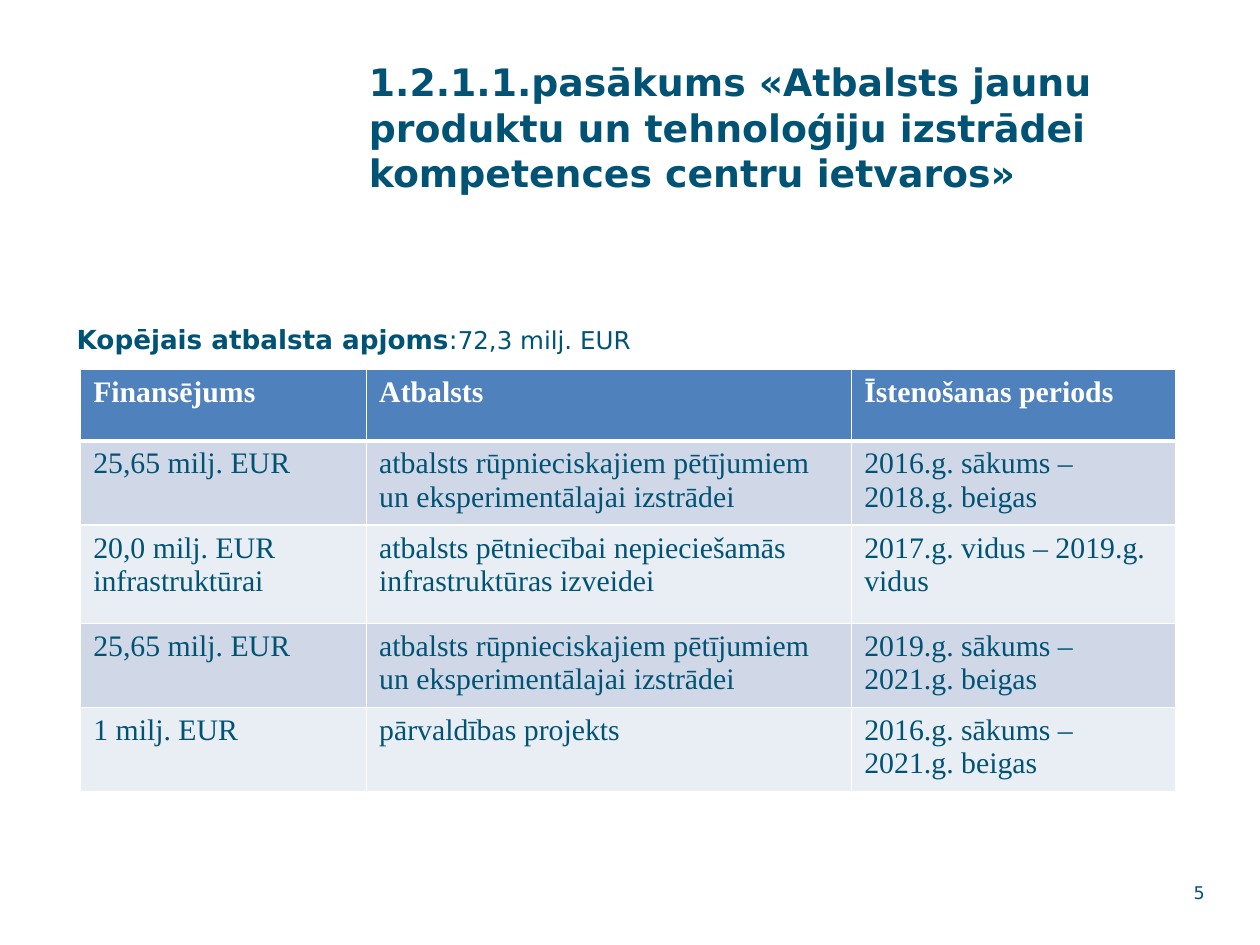
import pptx
import pptx.dml.color
import pptx.enum.text
import pptx.oxml
import pptx.oxml.ns
import pptx.util

Inches = pptx.util.Inches
Align = pptx.enum.text.PP_ALIGN
Anchor = pptx.enum.text.MSO_ANCHOR

COLUMN_WIDTHS = [2.27, 3.85, 2.57]
ROW_HEIGHTS = [0.57, 0.63, 0.78, 0.63, 0.63]
RESEARCH = "atbalsts rūpnieciskajiem pētījumiem un eksperimentālajai izstrādei"
FUNDING_ROWS = [
    ["Finansējums", "Atbalsts", "Īstenošanas periods"],
    ["25,65 milj. EUR", RESEARCH, "2016.g. sākums – 2018.g. beigas"],
    ["20,0 milj. EUR infrastruktūrai",
     "atbalsts pētniecībai nepieciešamās infrastruktūras izveidei",
     "2017.g. vidus – 2019.g. vidus"],
    ["25,65 milj. EUR", RESEARCH, "2019.g. sākums – 2021.g. beigas"],
    ["1 milj. EUR", "pārvaldības projekts", "2016.g. sākums – 2021.g. beigas"],
]


def color(value):
    return pptx.dml.color.RGBColor.from_string(value)


def write(paragraph, text, size=15, font="DejaVu Sans", fill="005374", bold=False):
    run = paragraph.add_run()
    run.text = text
    run.font.size = pptx.util.Pt(size)
    run.font.name = font
    run.font.bold = bold
    run.font.color.rgb = color(fill)


class SlideBuilder:
    header_fill = "4F81BD"
    band_fills = ["E9EDF4", "D0D8E8"]
    border = "FFFFFF"
    table_font = "Times New Roman"

    def __init__(self, presentation):
        self.slide = presentation.slides.add_slide(presentation.slide_layouts[6])

    def text_box(self, left, top, width, height, align=Align.LEFT, anchor=Anchor.TOP):
        shape = self.slide.shapes.add_textbox(
            Inches(left), Inches(top), Inches(width), Inches(height))
        frame = shape.text_frame
        frame.word_wrap = True
        frame.vertical_anchor = anchor
        paragraph = frame.paragraphs[0]
        paragraph.alignment = align
        return paragraph

    def cell_borders(self, cell, bottom_width):
        properties = cell._tc.get_or_add_tcPr()
        namespace = pptx.oxml.ns.nsdecls("a")
        for side in "LRTB":
            width = pptx.util.Pt(bottom_width if side == "B" else 1)
            properties.append(pptx.oxml.parse_xml(
                f'<a:ln{side} {namespace} w="{width}"><a:solidFill>'
                f'<a:srgbClr val="{self.border}"/></a:solidFill></a:ln{side}>'))

    def table(self, left, top, rows, widths, heights):
        table = self.slide.shapes.add_table(
            len(rows), len(widths), Inches(left), Inches(top),
            Inches(sum(widths)), Inches(sum(heights))).table
        for column, width in zip(table.columns, widths):
            column.width = Inches(width)
        for index, (row, height, texts) in enumerate(zip(table.rows, heights, rows)):
            row.height = Inches(height)
            header = index == 0
            for cell, text in zip(row.cells, texts):
                self.cell_borders(cell, 3 if header or index == len(rows) else 1)
                cell.fill.solid()
                cell.fill.fore_color.rgb = color(
                    self.header_fill if header else self.band_fills[index % 2])
                write(cell.text_frame.paragraphs[0], text, size=17, font=self.table_font,
                      fill="FFFFFF" if header else "005374", bold=header)


def main():
    presentation = pptx.Presentation()
    presentation.slide_width = Inches(10)
    presentation.slide_height = Inches(7.5)
    builder = SlideBuilder(presentation)

    title = builder.text_box(2.83, 0.42, 6.67, 1.13)
    write(title, "1.2.1.1.pasākums «Atbalsts jaunu produktu un tehnoloģiju izstrādei "
          "kompetences centru ietvaros»", size=21.6, bold=True)

    total = builder.text_box(0.51, 2.52, 9.15, 0.35, align=Align.JUSTIFY)
    write(total, "Kopējais atbalsta apjoms", bold=True)
    write(total, ":")
    write(total, "72,3 milj. EUR", size=14)

    number = builder.text_box(9.33, 6.92, 0.33, 0.33, Align.RIGHT, Anchor.MIDDLE)
    write(number, "5", size=10)

    builder.table(0.64, 2.93, FUNDING_ROWS, COLUMN_WIDTHS, ROW_HEIGHTS)
    presentation.save("out.pptx")


if __name__ == "__main__":
    main()
